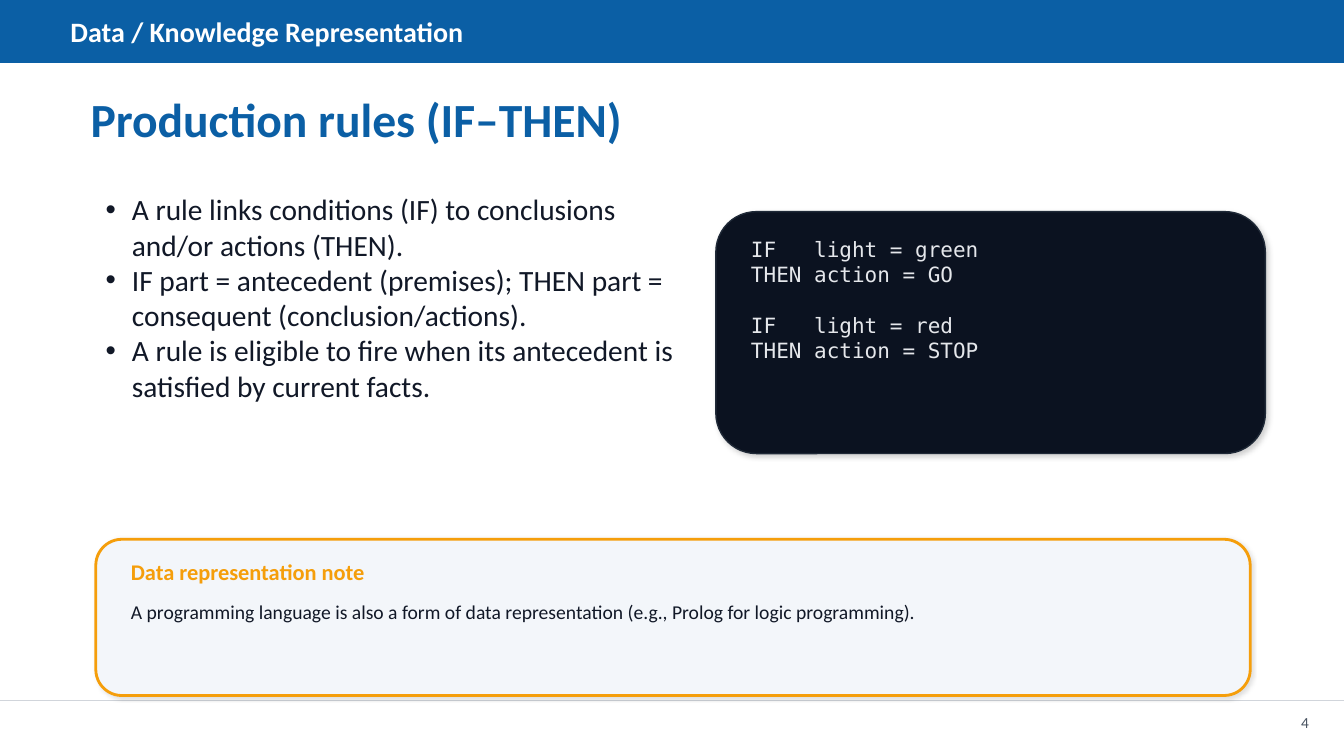
"""Build the slide on production rules."""
from dataclasses import dataclass
from typing import Optional

from lxml import etree
from pptx import Presentation
from pptx.dml.color import RGBColor
from pptx.enum.shapes import MSO_CONNECTOR, MSO_SHAPE
from pptx.enum.text import MSO_ANCHOR, PP_ALIGN
from pptx.oxml.ns import qn
from pptx.util import Inches, Pt

RECTANGLE = MSO_SHAPE.RECTANGLE
ROUNDED = MSO_SHAPE.ROUNDED_RECTANGLE
STRAIGHT = MSO_CONNECTOR.STRAIGHT
TOP, MIDDLE = MSO_ANCHOR.TOP, MSO_ANCHOR.MIDDLE
LEFT, RIGHT = PP_ALIGN.LEFT, PP_ALIGN.RIGHT

PAGE_WIDTH, PAGE_HEIGHT = 13.33, 7.5
FOOTER_TOP = 6.95
BULLET_INDENT = 0.26
COLORS = {
    "white": "FFFFFF",
    "blue": "0B5FA5",
    "ink": "111827",
    "rule": "D1D5DB",
    "night": "0B1220",
    "night_edge": "1F2937",
    "code": "E5E7EB",
    "mist": "F3F6FA",
    "amber": "F59E0B",
    "gray": "4B5563",
    "black": "000000",
}


@dataclass(frozen=True)
class Shadow:
    opacity: int
    blur: float
    distance: float
    angle: int = 45


@dataclass(frozen=True)
class Panel:
    area: tuple[float, float, float, float]
    fill: str
    edge: str
    edge_width: float = 1
    kind: MSO_SHAPE = ROUNDED
    shadow: Optional[Shadow] = None


@dataclass(frozen=True)
class Label:
    area: tuple[float, float, float, float]
    lines: tuple[str, ...]
    size: float
    color: str
    font: str = "Calibri"
    bold: bool = False
    anchor: MSO_ANCHOR = TOP
    align: PP_ALIGN = LEFT
    bulleted: bool = False
    gaps: tuple[float, ...] = ()


HEADER = Panel((0, 0, PAGE_WIDTH, 0.62), "blue", "blue", kind=RECTANGLE)
CODE_PANEL = Panel((7.1, 2.1, 5.45, 2.4), "night", "night_edge", shadow=Shadow(18, 4, 2))
NOTE_PANEL = Panel((0.95, 5.35, 11.45, 1.55), "mist", "amber", 2, shadow=Shadow(12, 3, 1))

LABELS = (
    Label((0.6, 0.14, 12.13, 0.35), ("Data / Knowledge Representation",),
          20, "white", bold=True, anchor=MIDDLE),
    Label((0.8, 0.85, 11.73, 0.65), ("Production rules (IF–THEN)",),
          34, "blue", bold=True, anchor=MIDDLE),
    Label((0.95, 1.85, 5.95, 3.35), (
        "A rule links conditions (IF) to conclusions and/or actions (THEN).",
        "IF part = antecedent (premises); THEN part = consequent (conclusion/actions).",
        "A rule is eligible to fire when its antecedent is satisfied by current facts.",
    ), 21, "ink", bulleted=True),
    Label((7.35, 2.3, 4.95, 2), (
        "IF   light = green",
        "THEN action = GO",
        "IF   light = red",
        "THEN action = STOP",
    ), 15, "code", font="DejaVu Sans Mono", gaps=(0, 0, 18, 0)),
    Label((1.2, 5.5, 10.95, 0.35), ("Data representation note",),
          16, "amber", bold=True, anchor=MIDDLE),
    Label((1.2, 5.9, 10.95, 0.85), (
        "A programming language is also a form of data representation "
        "(e.g., Prolog for logic programming).",
    ), 14, "ink"),
    Label((12.58, 7.02, 0.5, 0.3), ("4",), 11, "gray", anchor=MIDDLE, align=RIGHT),
)


def rgb(name: str) -> RGBColor:
    return RGBColor.from_string(COLORS[name])


def add_shadow(shape, shadow: Shadow) -> None:
    effects = shape._element.spPr.find(qn("a:effectLst"))
    outer = etree.SubElement(effects, qn("a:outerShdw"), {
        "blurRad": str(Pt(shadow.blur)),
        "dist": str(Pt(shadow.distance)),
        "dir": str(shadow.angle * 60000),
        "algn": "tl",
        "rotWithShape": "0",
    })
    color = etree.SubElement(outer, qn("a:srgbClr"), val=COLORS["black"])
    etree.SubElement(color, qn("a:alpha"), val=str(shadow.opacity * 1000))


def draw_panel(page, panel: Panel) -> None:
    shape = page.shapes.add_shape(panel.kind, *map(Inches, panel.area))
    shape.shadow.inherit = False
    shape.fill.solid()
    shape.fill.fore_color.rgb = rgb(panel.fill)
    shape.line.color.rgb = rgb(panel.edge)
    shape.line.width = Pt(panel.edge_width)
    if panel.shadow:
        add_shadow(shape, panel.shadow)


def add_bullet(para) -> None:
    properties = para._p.get_or_add_pPr()
    properties.set("marL", str(Inches(BULLET_INDENT)))
    properties.set("indent", str(-Inches(BULLET_INDENT)))
    etree.SubElement(properties, qn("a:buFont"), typeface="Arial")
    etree.SubElement(properties, qn("a:buChar"), char="•")


def draw_label(page, label: Label) -> None:
    box = page.shapes.add_textbox(*map(Inches, label.area))
    frame = box.text_frame
    frame.word_wrap = True
    frame.vertical_anchor = label.anchor
    font_format = {"name": label.font, "size": Pt(label.size), "bold": label.bold}
    for index, line in enumerate(label.lines):
        para = frame.add_paragraph() if index else frame.paragraphs[0]
        para.alignment = label.align
        if label.gaps and label.gaps[index]:
            para.space_before = Pt(label.gaps[index])
        if label.bulleted:
            add_bullet(para)
        span = para.add_run()
        span.text = line
        for name, value in font_format.items():
            setattr(span.font, name, value)
        span.font.color.rgb = rgb(label.color)


def draw_footer_rule(page) -> None:
    top = Inches(FOOTER_TOP)
    rule = page.shapes.add_connector(STRAIGHT, 0, top, Inches(PAGE_WIDTH), top)
    rule.line.color.rgb = rgb("rule")
    rule.line.width = Pt(1)
    etree.SubElement(rule._element.spPr, qn("a:effectLst"))


def main() -> None:
    deck = Presentation()
    deck.slide_width = Inches(PAGE_WIDTH)
    deck.slide_height = Inches(PAGE_HEIGHT)
    page = deck.slides.add_slide(deck.slide_layouts[6])
    page.background.fill.solid()
    page.background.fill.fore_color.rgb = rgb("white")
    draw_panel(page, HEADER)
    draw_footer_rule(page)
    for panel in (CODE_PANEL, NOTE_PANEL):
        draw_panel(page, panel)
    for label in LABELS:
        draw_label(page, label)
    deck.save("out.pptx")


if __name__ == "__main__":
    main()
